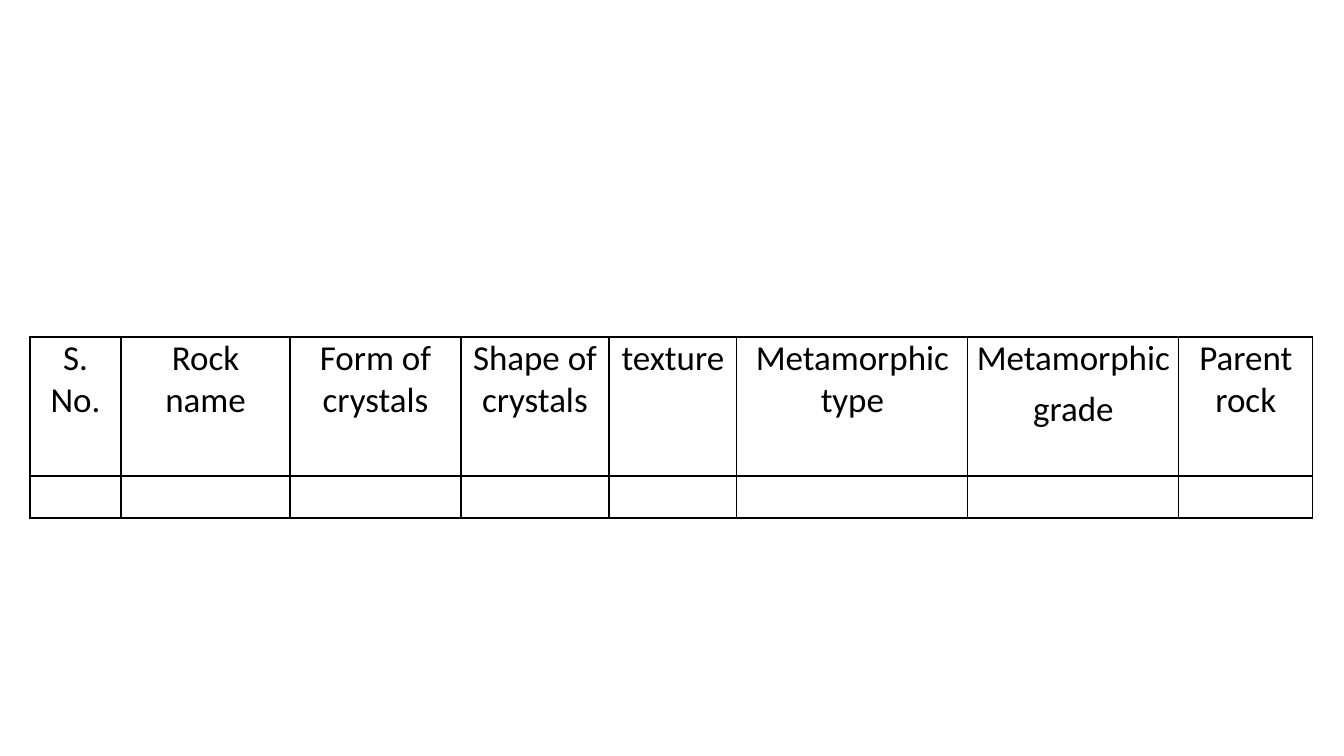
from lxml.etree import SubElement
from pptx import Presentation
from pptx.dml.color import RGBColor
from pptx.enum.text import PP_ALIGN
from pptx.oxml.ns import qn
from pptx.util import Pt

# Content: heading lines and column width in px
COLS = [
    (["S. No."], 91),
    (["Rock name"], 169),
    (["Form of crystals"], 171),
    (["Shape of crystals"], 148),
    (["texture"], 128),
    (["Metamorphic type"], 231),
    (["Metamorphic", "grade"], 211),
    (["Parent rock"], 134),
]
ROWS = [139, 42]
LEFT, TOP = 30, 337
COLORS = {"ink": "000000", "paper": "FFFFFF"}
EDGES = ["a:lnL", "a:lnR", "a:lnT", "a:lnB"]


def px(n):
    return round(n * 914400 / 100.8)


def write(frame, lines, size=25, font="Calibri", color="ink", after=6):
    for i, line in enumerate(lines):
        para = frame.add_paragraph() if i else frame.paragraphs[0]
        para.alignment = PP_ALIGN.CENTER
        para.space_after = Pt(after)
        run = para.add_run()
        run.text = line
        run.font.size = Pt(size)
        run.font.name = font
        run.font.color.rgb = RGBColor.from_string(COLORS[color])


def style(cell):
    cell.margin_left = cell.margin_right = px(7)
    cell.margin_top = cell.margin_bottom = 0
    cell.fill.solid()
    cell.fill.fore_color.rgb = RGBColor.from_string(COLORS["paper"])
    # Borders come before the fill in the cell properties
    props = cell._tc.get_or_add_tcPr()
    for i, edge in enumerate(EDGES):
        line = SubElement(props, qn(edge), w=str(Pt(1)))
        fill = SubElement(line, qn("a:solidFill"))
        SubElement(fill, qn("a:srgbClr"), val=COLORS["ink"])
        props.insert(i, line)


def main():
    deck = Presentation()
    deck.slide_width, deck.slide_height = px(1344), px(756)
    slide = deck.slides.add_slide(deck.slide_layouts[6])

    # Table grid
    wide = sum(width for _, width in COLS)
    grid = slide.shapes.add_table(len(ROWS), len(COLS), px(LEFT), px(TOP),
                                  px(wide), px(sum(ROWS))).table
    grid.first_row = grid.horz_banding = False
    for row, height in zip(grid.rows, ROWS):
        row.height = px(height)
    for cell in grid.iter_cells():
        style(cell)

    # Headings
    for i, (lines, width) in enumerate(COLS):
        grid.columns[i].width = px(width)
        write(grid.cell(0, i).text_frame, lines)

    deck.save("out.pptx")


if __name__ == "__main__":
    main()
